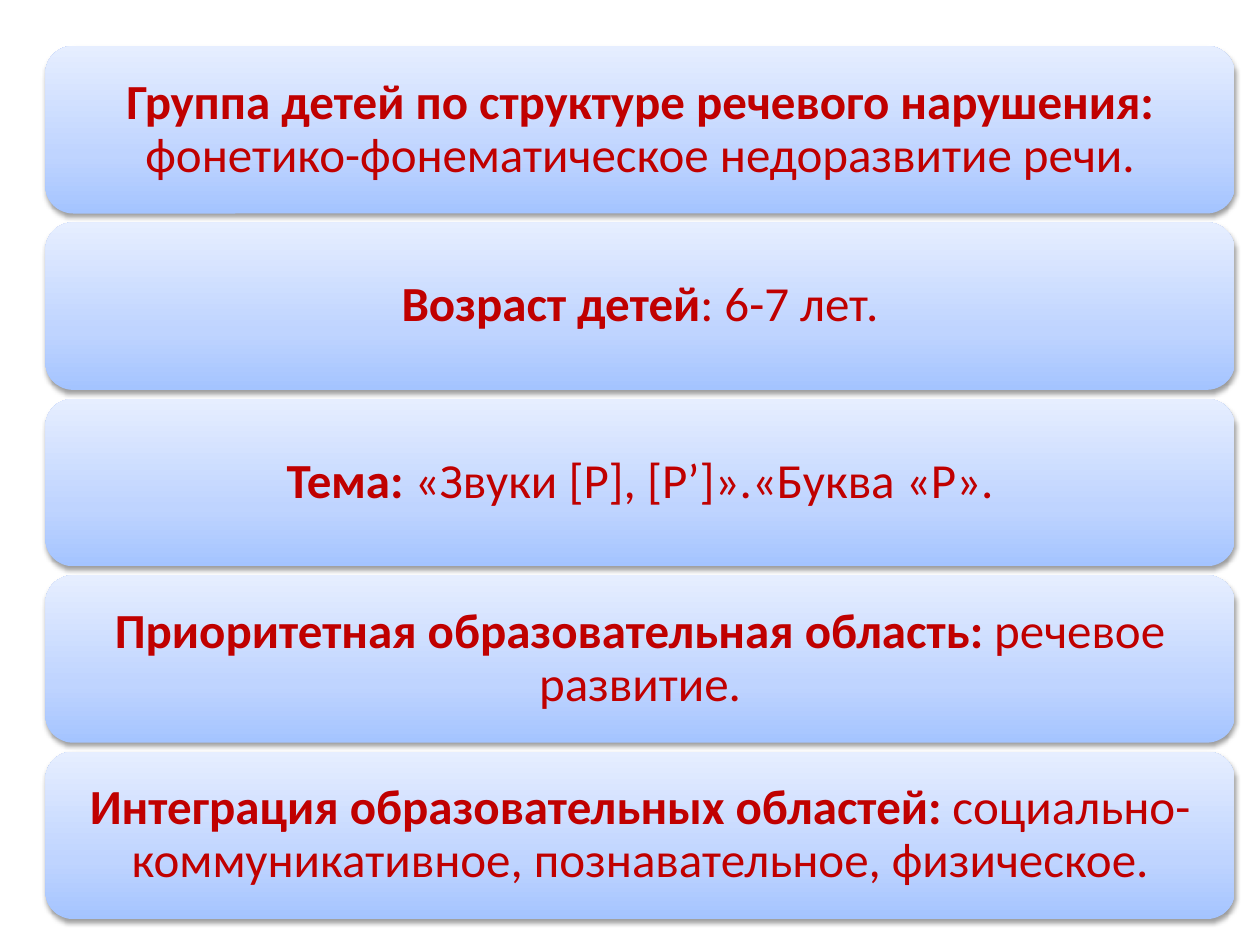
import pptx
import pptx.util
import pptx.dml.color
import pptx.enum.shapes
import pptx.enum.text
import pptx.oxml
import pptx.oxml.ns
from pptx.util import Inches

# Content: bold heading, regular text
CARDS = [
    ("Группа детей по структуре речевого нарушения:",
     " фонетико-фонематическое недоразвитие речи."),
    ("Возраст детей", ": 6-7 лет."),
    ("Тема: ", "«Звуки [Р], [Р’]».«Буква «Р»."),
    ("Приоритетная образовательная область:", " речевое развитие."),
    ("Интеграция образовательных областей:",
     " социально-коммуникативное, познавательное, физическое."),
]
GRADIENT = [(0, "A4C4FF"), (35, "BFD4FF"), (100, "E6EEFF")]
TEXT_COLOR = "C00000"

# Layout in inches
LEFT, TOP, WIDTH, HEIGHT, GAP = 0.36, 0.365, 9.44, 1.33, 0.07


def rgb(value):
    return pptx.dml.color.RGBColor.from_string(value)


def add_xml(parent, xml):
    ns = pptx.oxml.ns.nsdecls("a")
    parent.append(pptx.oxml.parse_xml(xml.replace(" ", f" {ns} ", 1)))


def style_card(sp):
    # Three-stop gradient, running upwards
    sp.fill.gradient()
    sp.fill.gradient_angle = 90
    stops = sp._element.spPr.find(".//" + pptx.oxml.ns.qn("a:gsLst"))
    for stop in list(stops):
        stops.remove(stop)
    for position, color in GRADIENT:
        add_xml(stops, f'<a:gs pos="{position * 1000}"><a:srgbClr val="{color}"/></a:gs>')
    sp.line.fill.background()

    # Soft shadow below the card
    sp.shadow.inherit = False
    effects = sp._element.spPr.find(pptx.oxml.ns.qn("a:effectLst"))
    add_xml(effects, f'<a:outerShdw blurRad="{pptx.util.Pt(3.1)}" dist="{pptx.util.Pt(1.6)}" '
                     'dir="5400000" rotWithShape="0"><a:srgbClr val="000000">'
                     '<a:alpha val="38000"/></a:srgbClr></a:outerShdw>')


def add_card(s, top, heading, text):
    sp = s.shapes.add_shape(pptx.enum.shapes.MSO_SHAPE.ROUNDED_RECTANGLE,
                            Inches(LEFT), Inches(top), Inches(WIDTH), Inches(HEIGHT))
    style_card(sp)

    tf = sp.text_frame
    tf.word_wrap = True
    tf.vertical_anchor = pptx.enum.text.MSO_ANCHOR.MIDDLE
    tf.margin_left = tf.margin_right = Inches(0.12)
    tf.margin_top = tf.margin_bottom = Inches(0.06)
    p = tf.paragraphs[0]
    p.alignment = pptx.enum.text.PP_ALIGN.CENTER
    p.line_spacing = 0.9
    for part, bold in ((heading, True), (text, False)):
        r = p.add_run()
        r.text = part
        r.font.name = "Calibri"
        r.font.size = pptx.util.Pt(28)
        r.font.bold = bold
        r.font.color.rgb = rgb(TEXT_COLOR)


def main():
    prs = pptx.Presentation()
    prs.slide_width, prs.slide_height = Inches(10), Inches(7.5)
    s = prs.slides.add_slide(prs.slide_layouts[6])
    for i, (heading, text) in enumerate(CARDS):
        add_card(s, TOP + i * (HEIGHT + GAP), heading, text)
    prs.save("out.pptx")


if __name__ == "__main__":
    main()
